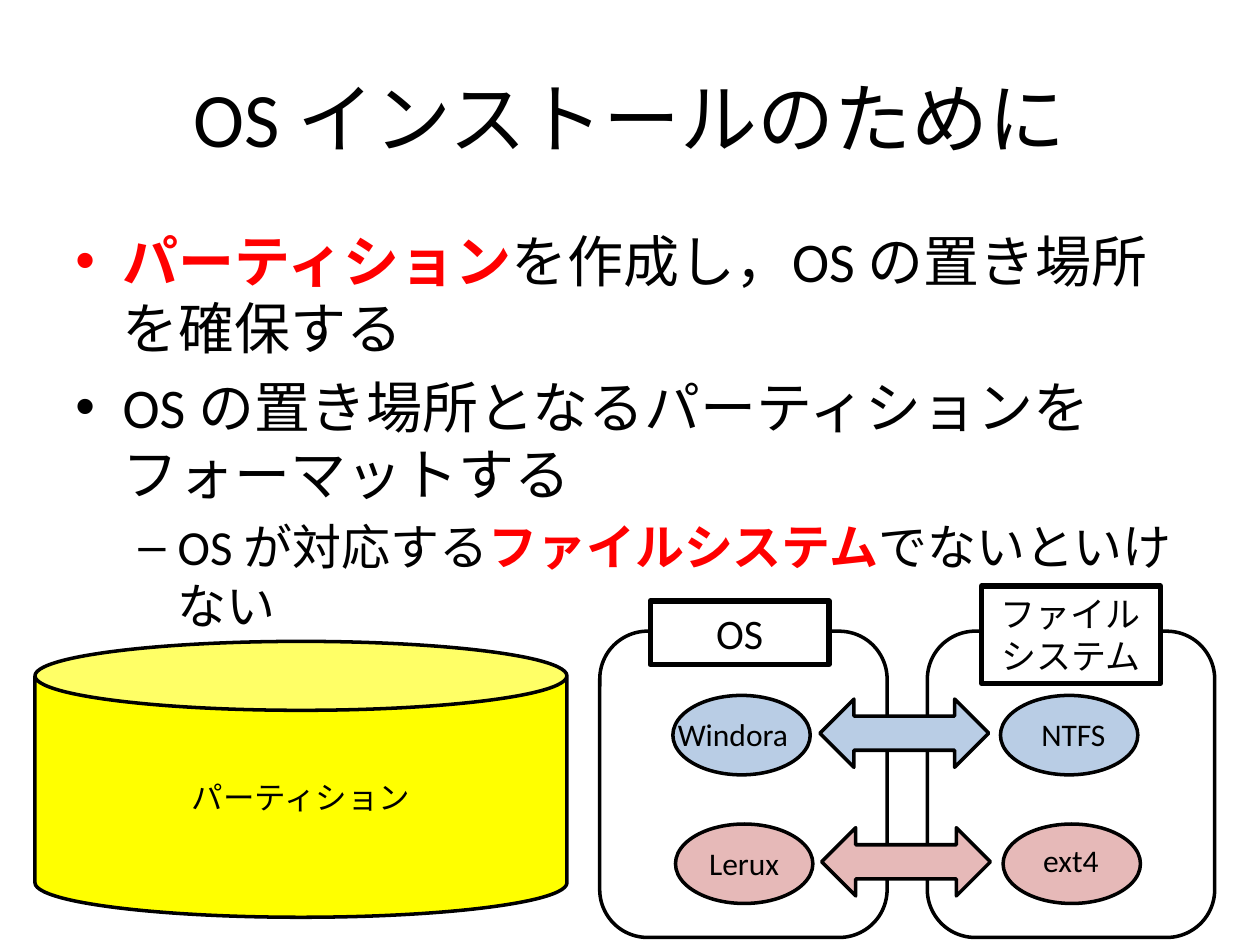
from lxml import etree
from pptx import Presentation
from pptx.dml.color import RGBColor
from pptx.enum import shapes, text
from pptx.oxml import ns
from pptx.util import Pt

BLACK = RGBColor(0x00, 0x00, 0x00)
WHITE = RGBColor(0xFF, 0xFF, 0xFF)
RED = RGBColor(0xFF, 0x00, 0x00)
YELLOW = RGBColor(0xFF, 0xFF, 0x00)
BLUE = RGBColor(0xB9, 0xCD, 0xE5)
PINK = RGBColor(0xE6, 0xB9, 0xB8)
FONT = "Calibri"
PANEL_PITCH = 187.2
ROW_PITCH = 73.5
ROW_SHIFT = 1.5
KIND = shapes.MSO_SHAPE
CENTER = text.PP_ALIGN.CENTER
LEFT = text.PP_ALIGN.LEFT
TOP = text.MSO_ANCHOR.TOP
MIDDLE = text.MSO_ANCHOR.MIDDLE


def write(paragraph, content, size=18, color=BLACK, bold=False, align=None):
    run = paragraph.add_run()
    run.text = content
    run.font.name = FONT
    run.font.size = Pt(size)
    run.font.color.rgb = color
    run.font.bold = bold
    if align is not None:
        paragraph.alignment = align


def write_lines(frame, lines, anchor=TOP, **style):
    frame.word_wrap = True
    frame.vertical_anchor = anchor
    for index, line in enumerate(lines):
        paragraph = frame.add_paragraph() if index else frame.paragraphs[0]
        write(paragraph, line, **style)


def add_label(parent, box, lines, **style):
    label = parent.add_textbox(*map(Pt, box))
    write_lines(label.text_frame, lines, **style)


def add_figure(parent, kind, box, fill=None, weight=2):
    figure = parent.add_shape(kind, *map(Pt, box))
    figure.shadow.inherit = False
    if fill is None:
        figure.fill.background()
    else:
        figure.fill.solid()
        figure.fill.fore_color.rgb = fill
    figure.line.color.rgb = BLACK
    figure.line.width = Pt(weight)
    return figure


def set_bullet(paragraph, mark, margin, hanging):
    properties = paragraph._p.get_or_add_pPr()
    properties.set("marL", str(Pt(margin)))
    properties.set("indent", str(-Pt(hanging)))
    etree.SubElement(properties, ns.qn("a:buFont")).set("typeface", "Arial")
    etree.SubElement(properties, ns.qn("a:buChar")).set("char", mark)


def add_bullets(parent, box, items):
    frame = parent.add_textbox(*map(Pt, box)).text_frame
    frame.word_wrap = True
    for index, (level, pieces) in enumerate(items):
        paragraph = frame.add_paragraph() if index else frame.paragraphs[0]
        paragraph.level = level
        size, mark, margin, hanging = ((32, "•", 27, 27), (28, "–", 58.5, 22.5))[level]
        paragraph.space_before = Pt(size * 0.2)
        set_bullet(paragraph, mark, margin, hanging)
        for content, key in pieces:
            write(paragraph, content, size=size, color=RED if key else BLACK, bold=key)


def add_panel(parent, left, heading_box, heading, size):
    add_figure(parent, KIND.ROUNDED_RECTANGLE, (left, 360.7, 164.2, 175))
    plate = add_figure(parent, KIND.RECTANGLE, heading_box, WHITE, weight=3)
    write_lines(plate.text_frame, heading, size=size, align=CENTER)


def add_node(parent, column, row, fill, name, label_box, align):
    node = parent.add_group_shape().shapes
    left = 384.5 + column * PANEL_PITCH + row * ROW_SHIFT
    add_figure(node, KIND.OVAL, (left, 397.4 + row * ROW_PITCH, 78.5, 45.4), fill)
    add_label(node, label_box, [name], align=align)


def main():
    """Build the slide on partitions and file systems for installing an OS."""
    deck = Presentation()
    deck.slide_width, deck.slide_height = Pt(720), Pt(540)
    canvas = deck.slides.add_slide(deck.slide_layouts[6]).shapes

    add_label(canvas, (36, 21.6, 648, 90), ["OS インストールのために"],
              anchor=MIDDLE, size=44, align=CENTER)
    add_bullets(canvas, (36, 126, 648, 356.4), [
        (0, [("パーティション", True), ("を作成し，OS の置き場所を確保する", False)]),
        (0, [("OS の置き場所となるパーティションをフォーマットする", False)]),
        (1, [("OS が対応する", False), ("ファイルシステム", True),
             ("でないといけない", False)]),
    ])

    partition = add_figure(canvas, KIND.CAN, (20, 366.5, 304, 157.7), YELLOW)
    write_lines(partition.text_frame, ["パーティション"], anchor=MIDDLE, align=CENTER)

    add_panel(canvas, 342.7, (371.5, 343.4, 102.2, 36.4), ["OS"], 24)
    add_panel(canvas, 342.7 + PANEL_PITCH, (560.9, 334.8, 102.2, 55.7),
              ["ファイル", "システム"], 20)

    nodes = [
        (0, 0, BLUE, "Windora", (380.2, 404.8, 95, 29), LEFT),
        (0, 1, PINK, "Lerux", (386, 478.8, 78.5, 26), CENTER),
        (1, 0, BLUE, "NTFS", (573.8, 404.8, 79.2, 29), CENTER),
        (1, 1, PINK, "ext4", (589, 476.8, 49, 29), LEFT),
    ]
    for node in nodes:
        add_node(canvas, *node)
    for row, fill in enumerate((BLUE, PINK)):
        arrow_box = (468.5 + row, 399.5 + row * ROW_PITCH, 96.5, 39)
        add_figure(canvas, KIND.LEFT_RIGHT_ARROW, arrow_box, fill)

    deck.save("out.pptx")


if __name__ == "__main__":
    main()
